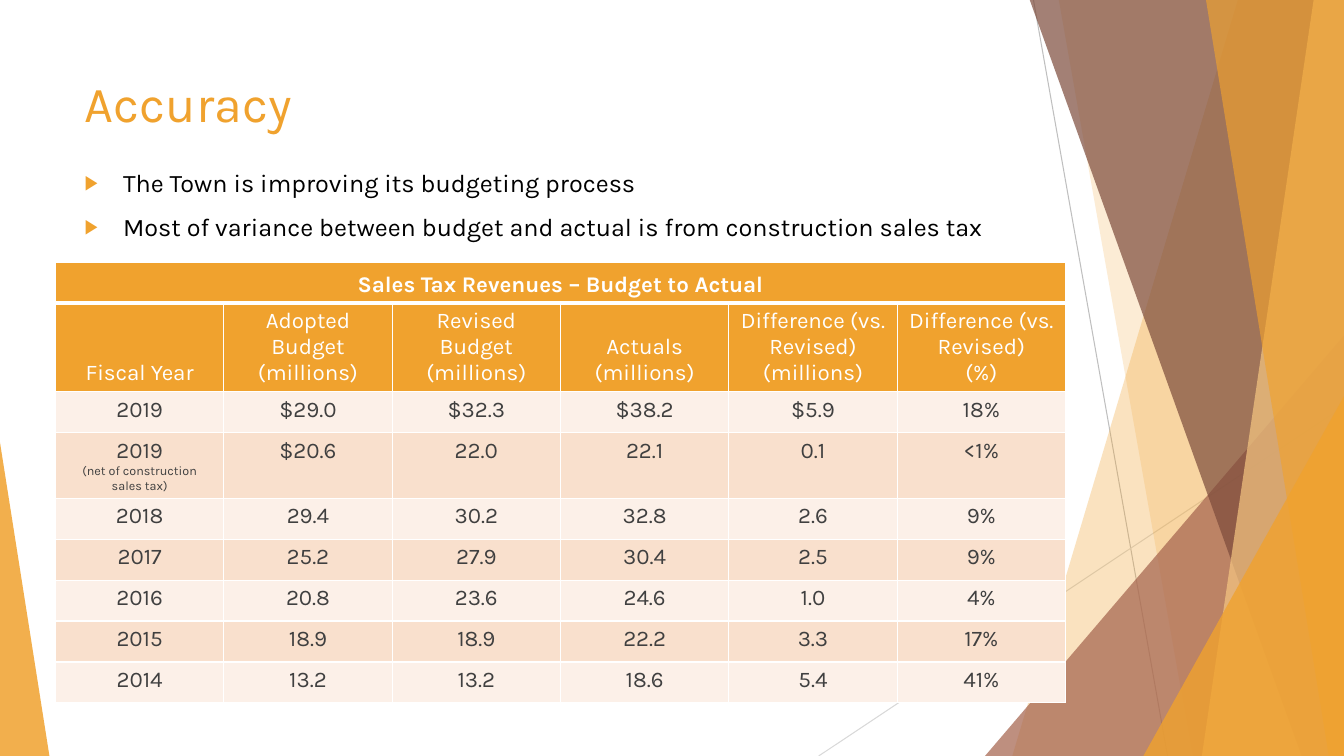
from dataclasses import dataclass

from lxml.etree import SubElement
from pptx import Presentation
from pptx.dml.color import RGBColor
from pptx.enum.shapes import MSO_CONNECTOR as Connector, MSO_SHAPE as Preset
from pptx.enum.text import MSO_ANCHOR as Anchor, MSO_AUTO_SIZE as AutoSize, PP_ALIGN as Align
from pptx.oxml.ns import qn
from pptx.util import Inches, Pt


@dataclass(frozen=True)
class Theme:
    font: str = "Karla"
    accent: str = "F0A22E"
    pale_accent: str = "F6C782"
    clay: str = "A5644E"
    brown: str = "7C4B3B"
    white: str = "FFFFFF"
    black: str = "000000"
    dark_grey: str = "404040"
    mid_grey: str = "BFBFBF"
    light_grey: str = "D9D9D9"
    row_bands: tuple = ("FCF0E8", "F9E0CD")
    title_size: int = 36
    body_size: int = 18
    table_size: int = 16
    note_size: int = 9


THEME = Theme()
TOP, RIGHT, BOTTOM = -0.01, 13.33, 7.5

# Each facet runs from its top edge to its bottom edge: top x, bottom x, colour, opacity
BACK_FACETS = [(12.28, 10.04, THEME.accent, 30), (10.5, 11.83, THEME.accent, 20)]
FRONT_FACETS = [
    (10.21, 12.91, THEME.brown, 70),
    (13.03, 11.92, THEME.pale_accent, 70),
    (11.96, 13.18, THEME.accent, 65),
]

BULLETS = [
    "The Town is improving its budgeting process",
    "Most of variance between budget and actual is from construction sales tax",
]
TABLE_TITLE = "Sales Tax Revenues – Budget to Actual"
HEADERS = [
    ["Fiscal Year"],
    ["Adopted Budget", "(millions)"],
    ["Revised Budget", "(millions)"],
    ["Actuals", "(millions)"],
    ["Difference (vs. Revised)", "(millions)"],
    ["Difference (vs. Revised)", "(%)"],
]
YEAR_ROWS = [
    (["2019"], "$29.0", "$32.3", "$38.2", "$5.9", "18%"),
    (["2019", "(net of construction", "sales tax)"], "$20.6", "22.0", "22.1", "0.1", "<1%"),
    (["2018"], "29.4", "30.2", "32.8", "2.6", "9%"),
    (["2017"], "25.2", "27.9", "30.4", "2.5", "9%"),
    (["2016"], "20.8", "23.6", "24.6", "1.0", "4%"),
    (["2015"], "18.9", "18.9", "22.2", "3.3", "17%"),
    (["2014"], "13.2", "13.2", "18.6", "5.4", "41%"),
]


def rgb(color):
    return RGBColor.from_string(color)


def add_run(paragraph, text, size, color, bold=False):
    run = paragraph.add_run()
    run.text = text
    run.font.name = THEME.font
    run.font.size = Pt(size)
    run.font.bold = bold
    run.font.color.rgb = rgb(color)


def add_line(slide, x1, y1, x2, y2, color):
    line = slide.shapes.add_connector(
        Connector.STRAIGHT, Inches(x1), Inches(y1), Inches(x2), Inches(y2))
    line.line.color.rgb = rgb(color)
    line.line.width = Pt(0.75)
    SubElement(line._element.spPr, qn("a:effectLst"))


def paint(shape, color, opacity):
    """Give a shape a translucent fill with no outline or shadow."""
    shape.shadow.inherit = False
    shape.line.fill.background()
    shape.fill.solid()
    shape.fill.fore_color.rgb = rgb(color)
    color_element = shape._element.spPr.find(qn("a:solidFill"))[0]
    SubElement(color_element, qn("a:alpha"), val=str(opacity * 1000))


def add_facet(slide, top_x, bottom_x, color, opacity):
    """Fill the area between a slanted edge and the slide's right side."""
    builder = slide.shapes.build_freeform(Inches(top_x), Inches(TOP))
    corners = [(RIGHT, TOP), (RIGHT, BOTTOM), (bottom_x, BOTTOM)]
    builder.add_line_segments([(Inches(x), Inches(y)) for x, y in corners], close=True)
    paint(builder.convert_to_shape(), color, opacity)


def add_corner(slide, left, top, width, apex, color, opacity):
    """Add a triangle that stands on the slide's bottom edge."""
    triangle = slide.shapes.add_shape(
        Preset.ISOSCELES_TRIANGLE, Inches(left), Inches(top), Inches(width), Inches(BOTTOM - top))
    triangle.adjustments[0] = apex
    paint(triangle, color, opacity)


def add_decoration(slide):
    add_line(slide, 10.25, 0, 11.58, BOTTOM, THEME.mid_grey)
    add_line(slide, RIGHT, 4.03, 8.12, BOTTOM, THEME.light_grey)
    for facet in BACK_FACETS:
        add_facet(slide, *facet)
    add_corner(slide, 9.77, 3.33, 3.56, 1, THEME.clay, 72)
    for facet in FRONT_FACETS:
        add_facet(slide, *facet)
    add_corner(slide, 11.34, 3.93, 1.99, 1, THEME.accent, 80)
    add_corner(slide, 0, 4.39, 0.49, 0, THEME.accent, 85)


def place_placeholder(slide, placeholder, top, height):
    """Move a placeholder into position, in front of the decoration."""
    placeholder.left, placeholder.top = Inches(0.74), Inches(top)
    placeholder.width, placeholder.height = Inches(9.4), Inches(height)
    slide.shapes._spTree.append(placeholder._element)
    frame = placeholder.text_frame
    frame.word_wrap = True
    frame.auto_size = AutoSize.NONE
    frame.vertical_anchor = Anchor.TOP
    return frame


def add_title(slide, text):
    paragraph = place_placeholder(slide, slide.shapes.title, 0.67, 1.44).paragraphs[0]
    paragraph.alignment = Align.LEFT
    add_run(paragraph, text, THEME.title_size, THEME.accent)


def add_bullets(slide, items):
    frame = place_placeholder(slide, slide.placeholders[1], 1.61, 4.24)
    for index, item in enumerate(items):
        paragraph = frame.add_paragraph() if index else frame.paragraphs[0]
        paragraph.space_before = Pt(10)
        properties = paragraph._p.get_or_add_pPr()
        properties.set("marL", str(Inches(0.38)))
        properties.set("indent", str(Inches(-0.38)))
        bullet_color = SubElement(properties, qn("a:buClr"))
        SubElement(bullet_color, qn("a:srgbClr"), val=THEME.accent)
        SubElement(properties, qn("a:buSzPct"), val="80000")
        SubElement(properties, qn("a:buChar"), char="▶")
        add_run(paragraph, item, THEME.body_size, THEME.black)


def set_borders(cell, top=1, bottom=1):
    properties = cell._tc.get_or_add_tcPr()
    for side, width in (("L", 1), ("R", 1), ("T", top), ("B", bottom)):
        border = SubElement(properties, qn(f"a:ln{side}"), w=str(Pt(width)))
        fill = SubElement(border, qn("a:solidFill"))
        SubElement(fill, qn("a:srgbClr"), val=THEME.white)


def fill_cell(cell, lines, fill, color, bold=False, note=False):
    """Write centred lines; with note, those after the first are small."""
    cell.fill.solid()
    cell.fill.fore_color.rgb = rgb(fill)
    for index, text in enumerate(lines):
        paragraph = cell.text_frame.add_paragraph() if index else cell.text_frame.paragraphs[0]
        paragraph.alignment = Align.CENTER
        size = THEME.note_size if note and index else THEME.table_size
        add_run(paragraph, text, size, color, bold)


def add_revenue_table(slide):
    table = slide.shapes.add_table(
        len(YEAR_ROWS) + 2, len(HEADERS),
        Inches(0.55), Inches(2.6), Inches(10.02), Inches(3.65)).table
    for column, header in enumerate(HEADERS):
        set_borders(table.cell(0, column), bottom=3)
        heading = table.cell(1, column)
        set_borders(heading, top=3)
        heading.vertical_anchor = Anchor.BOTTOM
        fill_cell(heading, header, THEME.accent, THEME.white)

    banner = table.cell(0, 0)
    banner.merge(table.cell(0, len(HEADERS) - 1))
    banner.vertical_anchor = Anchor.BOTTOM
    fill_cell(banner, [TABLE_TITLE], THEME.accent, THEME.white, bold=True)

    for index, (year, *values) in enumerate(YEAR_ROWS):
        for column, lines in enumerate([year] + [[value] for value in values]):
            cell = table.cell(index + 2, column)
            set_borders(cell)
            fill_cell(cell, lines, THEME.row_bands[index % 2], THEME.dark_grey, note=True)


def main():
    presentation = Presentation()
    presentation.slide_width, presentation.slide_height = Inches(RIGHT), Inches(BOTTOM)
    slide = presentation.slides.add_slide(presentation.slide_layouts[1])
    add_decoration(slide)
    add_title(slide, "Accuracy")
    add_bullets(slide, BULLETS)
    add_revenue_table(slide)
    presentation.save("out.pptx")


if __name__ == "__main__":
    main()
